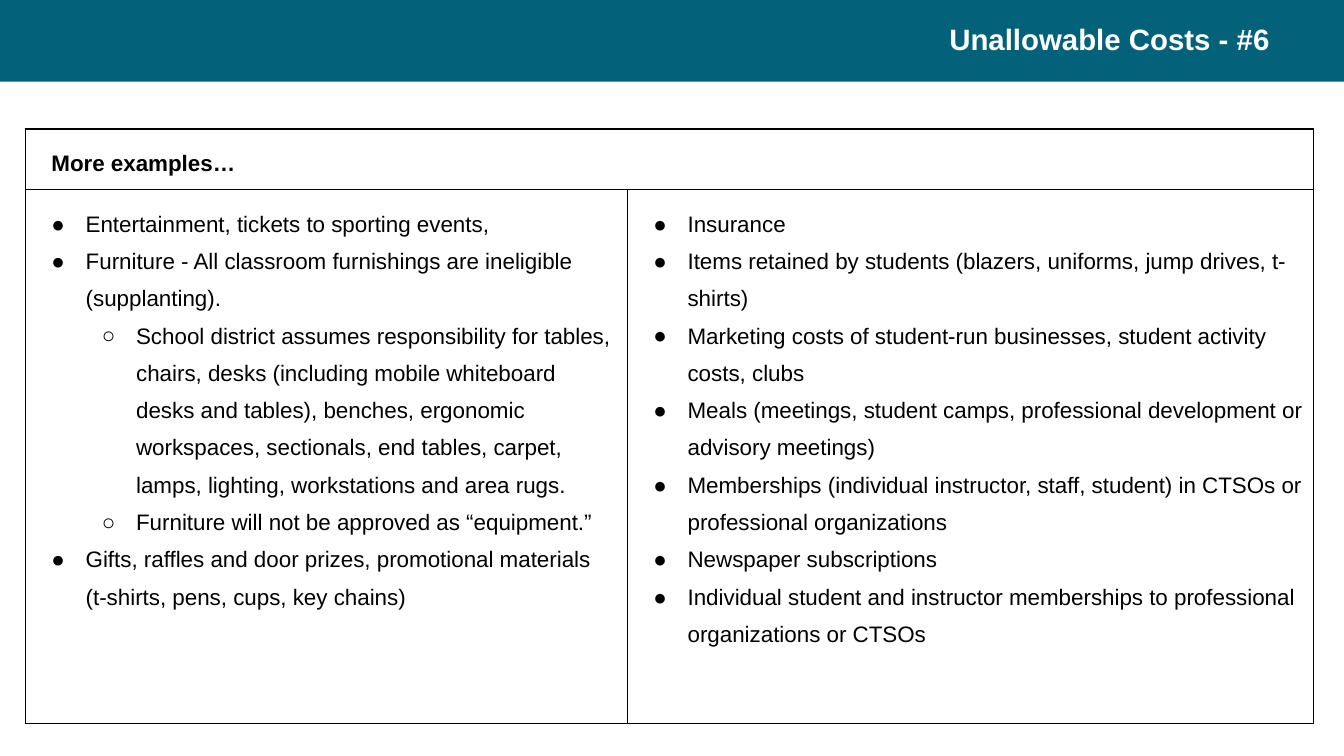
from lxml.etree import SubElement
from pptx import Presentation
from pptx.dml.color import RGBColor
from pptx.enum.shapes import MSO_SHAPE as Shape
from pptx.enum.text import MSO_ANCHOR as Anchor, PP_ALIGN as Align
from pptx.oxml.ns import qn
from pptx.util import Inches, Pt

COLORS = {"teal": "03617A", "white": "FFFFFF", "black": "000000"}
BULLETS = "●○"

# Each entry is (level, text)
LEFT_ITEMS = [
    (0, "Entertainment, tickets to sporting events,"),
    (0, "Furniture - All classroom furnishings are ineligible (supplanting)."),
    (1, "School district assumes responsibility for tables, chairs, desks "
        "(including mobile whiteboard desks and tables), benches, ergonomic "
        "workspaces, sectionals, end tables, carpet, lamps, lighting, "
        "workstations and area rugs."),
    (1, "Furniture will not be approved as “equipment.”"),
    (0, "Gifts, raffles and door prizes, promotional materials "
        "(t-shirts, pens, cups, key chains)"),
]
RIGHT_ITEMS = [
    (0, "Insurance"),
    (0, "Items retained by students (blazers, uniforms, jump drives, t-shirts)"),
    (0, "Marketing costs of student-run businesses, student activity costs, clubs"),
    (0, "Meals (meetings, student camps, professional development or advisory meetings)"),
    (0, "Memberships (individual instructor, staff, student) in CTSOs or "
        "professional organizations"),
    (0, "Newspaper subscriptions"),
    (0, "Individual student and instructor memberships to professional "
        "organizations or CTSOs"),
]


def set_font(para, size, color, bold):
    para.font.name = "Arial"
    para.font.size = Pt(size)
    para.font.bold = bold
    para.font.color.rgb = RGBColor.from_string(COLORS[color])


def add_solid_fill(parent, color):
    fill = SubElement(parent, qn("a:solidFill"))
    SubElement(fill, qn("a:srgbClr"), val=COLORS[color])


deck = Presentation()
deck.slide_width, deck.slide_height = Inches(13.33), Inches(7.5)
page = deck.slides.add_slide(deck.slide_layouts[6])

# Title band
band_height = Inches(0.81)
band = page.shapes.add_shape(Shape.RECTANGLE, 0, 0, deck.slide_width, band_height)
band.shadow.inherit = False
band.fill.solid()
band.fill.fore_color.rgb = RGBColor.from_string(COLORS["teal"])
band.line.fill.background()

# Title
title = page.shapes.add_textbox(Inches(0.37), 0, Inches(12.32), band_height)
frame = title.text_frame
frame.word_wrap = True
frame.vertical_anchor = Anchor.MIDDLE
para = frame.paragraphs[0]
para.text = "Unallowable Costs - #6"
para.alignment = Align.RIGHT
para.line_spacing = 0.9
set_font(para, 21, "white", True)

# Table grid
widths, heights = (5.97, 6.81), (0.57, 5.3)
table = page.shapes.add_table(
    2, 2, Inches(0.25), Inches(1.28), Inches(sum(widths)), Inches(sum(heights))
).table
table.first_row = table.horz_banding = False
for column, width in zip(table.columns, widths):
    column.width = Inches(width)
for row, height in zip(table.rows, heights):
    row.height = Inches(height)

# Cell borders, margins and fill
for cell in table.iter_cells():
    properties = cell._tc.get_or_add_tcPr()
    for side in "LRTB":
        border = SubElement(properties, qn(f"a:ln{side}"), w=str(Pt(1)))
        add_solid_fill(border, "black")
    cell.fill.background()
    cell.margin_left = cell.margin_right = Inches(0.1)
    cell.margin_top = cell.margin_bottom = Inches(0.1)

# Heading row
heading = table.cell(0, 0)
heading.merge(table.cell(0, 1))
para = heading.text_frame.paragraphs[0]
para.text = "More examples…"
para.line_spacing = 1.5
para._p.get_or_add_pPr().set("marL", str(Inches(0.16)))
set_font(para, 16, "black", True)

# Bulleted lists
for column, items in enumerate((LEFT_ITEMS, RIGHT_ITEMS)):
    frame = table.cell(1, column).text_frame
    for index, (level, text) in enumerate(items):
        para = frame.add_paragraph() if index else frame.paragraphs[0]
        para.text = text
        para.level = level
        para.line_spacing = 1.5
        properties = para._p.get_or_add_pPr()
        properties.set("marL", str(Inches(0.5 * (level + 1))))
        properties.set("indent", str(Inches(-0.34)))
        bullet_color = SubElement(properties, qn("a:buClr"))
        SubElement(bullet_color, qn("a:srgbClr"), val=COLORS["black"])
        SubElement(properties, qn("a:buFont"), typeface="Arial")
        SubElement(properties, qn("a:buChar"), char=BULLETS[level])
        set_font(para, 16, "black", False)

deck.save("out.pptx")
